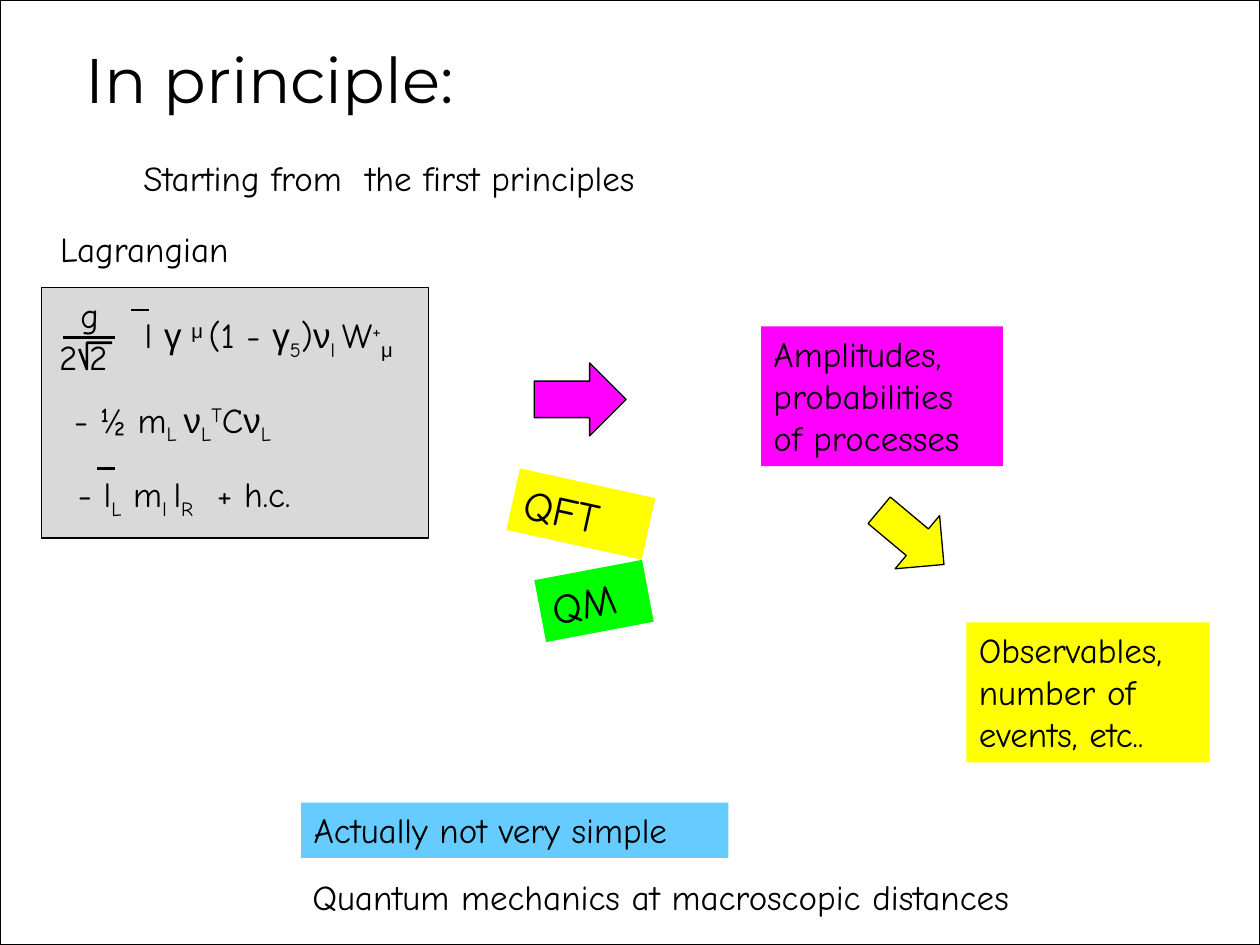
from dataclasses import dataclass

from lxml.etree import SubElement
from pptx import Presentation
from pptx.dml.color import RGBColor
from pptx.enum.shapes import MSO_CONNECTOR as Connector, MSO_SHAPE as Shape
from pptx.enum.text import MSO_ANCHOR as Anchor, PP_ALIGN as Align
from pptx.oxml.ns import qn
from pptx.util import Inches, Pt


@dataclass(frozen=True)
class Theme:
    ink: str = "000000"
    paper: str = "FFFFFF"
    panel: str = "D9D9D9"
    magenta: str = "FF00FF"
    yellow: str = "FFFF00"
    green: str = "00FF00"
    sky: str = "66CCFF"
    title_font: str = "Montserrat"
    body_font: str = "Comic Neue"
    greek_font: str = "Arial"
    title_size: int = 36
    label_size: int = 24
    body_size: int = 20
    outline: float = 0.75
    stroke: float = 1.5


@dataclass(frozen=True)
class Box:
    left: float
    top: float
    width: float
    height: float

    def inner(self, left, top, width, height):
        return Box(self.left + left, self.top + top, width, height)

    def lengths(self):
        return [Inches(value) for value in (self.left, self.top, self.width, self.height)]


THEME = Theme()
SUPER, SUB = 30, -25


def color(value):
    return RGBColor.from_string(value)


def style_run(run, size, font):
    run.font.size = Pt(size)
    run.font.name = font
    run.font.color.rgb = color(THEME.ink)


def add_block(slide, box, fill, kind=Shape.RECTANGLE, outlined=False, rotation=0):
    shape = slide.shapes.add_shape(kind, *box.lengths())
    shape.shadow.inherit = False
    shape.rotation = rotation
    shape.fill.solid()
    shape.fill.fore_color.rgb = color(fill)
    if outlined:
        shape.line.color.rgb = color(THEME.ink)
        shape.line.width = Pt(THEME.outline)
    else:
        shape.line.fill.background()
    return shape


def write_lines(shape, lines, size=THEME.body_size, wrap=True):
    frame = shape.text_frame
    frame.word_wrap = wrap
    frame.vertical_anchor = Anchor.TOP
    frame.text = "\n".join(lines)
    for paragraph in frame.paragraphs:
        paragraph.alignment = Align.LEFT
        for run in paragraph.runs:
            style_run(run, size, THEME.body_font)


def add_text(slide, box, lines, wrap=True):
    shape = slide.shapes.add_textbox(*box.lengths())
    write_lines(shape, lines, wrap=wrap)
    return shape


def add_card(slide, box, fill, lines, size=THEME.body_size, rotation=0):
    write_lines(add_block(slide, box, fill, rotation=rotation), lines, size)


def add_formula(slide, box, parts):
    frame = slide.shapes.add_textbox(*box.lengths()).text_frame
    frame.word_wrap = False
    for text, baseline in parts:
        run = frame.paragraphs[0].add_run()
        run.text = text
        style_run(run, THEME.body_size, THEME.greek_font if text[0] in "γμν" else THEME.body_font)
        if baseline:
            run.font._element.set("baseline", str(baseline * 1000))


def add_bar(slide, left, top, width):
    x, y, length = Inches(left), Inches(top), Inches(width)
    bar = slide.shapes.add_connector(Connector.STRAIGHT, x, y, x + length, y)
    bar.line.color.rgb = color(THEME.ink)
    bar.line.width = Pt(THEME.stroke)
    SubElement(bar._element.spPr, qn("a:effectLst"))


def add_coupling(slide, box):
    fraction = add_text(slide, box, ["g", "2 2"], wrap=False)
    numerator = fraction.text_frame.paragraphs[0]
    numerator._p.get_or_add_pPr().set("marL", str(Inches(0.17)))
    add_bar(slide, box.left + 0.13, box.top + 0.4, 0.41)

    points = [(0.26, 0.49), (0.32, 0.65), (0.32, 0.44), (0.52, 0.44)]
    corners = [(Inches(box.left + x), Inches(box.top + y)) for x, y in points]
    builder = slide.shapes.build_freeform(*corners[0])
    builder.add_line_segments(corners[1:], close=False)
    root = builder.convert_to_shape()
    root.shadow.inherit = False
    root.fill.background()
    root.line.color.rgb = color(THEME.ink)
    root.line.width = Pt(THEME.stroke)


def add_lagrangian(slide, box):
    add_block(slide, box, THEME.panel, outlined=True)
    add_text(slide, box.inner(0.05, -0.52, 1.67, 0.44), ["Lagrangian"])
    add_coupling(slide, box.inner(0.04, 0, 0.62, 0.77))
    add_formula(slide, box.inner(0.72, 0.16, 2.3, 0.44), [
        ("l ", 0), ("γ ", 0), ("μ ", SUPER), ("(1 - ", 0), ("γ", 0), ("5", SUB), (")", 0),
        ("ν", 0), ("l ", SUB), ("W", 0), ("+", SUPER), ("μ", SUB)])
    add_formula(slide, box.inner(0.16, 0.83, 2.6, 0.44), [
        ("- ½ m", 0), ("L ", SUB), ("ν", 0), ("L", SUB), ("T", SUPER),
        ("C", 0), ("ν", 0), ("L", SUB)])
    add_formula(slide, box.inner(0.19, 1.42, 2.16, 0.44), [
        ("- l", 0), ("L", SUB), (" m", 0), ("l ", SUB), ("l", 0), ("R", SUB), ("  + h.c.", 0)])
    for left, top in ((0.71, 0.18), (0.44, 1.44)):
        add_bar(slide, box.left + left, box.top + top, 0.14)


def add_theories(slide, box):
    add_block(slide, box.inner(0.18, 0, 0.73, 0.58), THEME.magenta, Shape.RIGHT_ARROW, True)
    add_card(slide, box.inner(0, 0.95, 1.1, 0.5), THEME.yellow, ["QFT"], THEME.label_size, 12.4)
    add_card(slide, box.inner(0.22, 1.64, 0.87, 0.5), THEME.green, ["QM"], THEME.label_size, 349.3)


def add_results(slide, box):
    add_card(slide, box.inner(0, 0, 1.92, 1.11), THEME.magenta,
             ["Amplitudes, probabilities", "of processes"])
    add_block(slide, box.inner(0.92, 1.34, 0.55, 0.67), THEME.yellow, Shape.DOWN_ARROW, True, 309.9)
    add_card(slide, box.inner(1.63, 2.35, 1.93, 1.11), THEME.yellow,
             ["Observables,", "number of events, etc.."])


def add_conclusion(slide, box):
    add_card(slide, box.inner(0.01, 0, 3.39, 0.44), THEME.sky, ["Actually not very simple"])
    add_card(slide, box.inner(0, 0.53, 6.31, 0.44), THEME.paper,
             ["Quantum mechanics at macroscopic distances"])


def place_title(slide, box, text):
    title = slide.shapes.title
    title.left, title.top, title.width, title.height = box.lengths()
    frame = title.text_frame
    frame.text = text
    frame.word_wrap = False
    frame.vertical_anchor = Anchor.MIDDLE
    paragraph = frame.paragraphs[0]
    paragraph.alignment = Align.CENTER
    style_run(paragraph.runs[0], THEME.title_size, THEME.title_font)
    slide.shapes._spTree.append(title._element)


def main():
    presentation = Presentation()
    presentation.slide_width, presentation.slide_height = Inches(10), Inches(7.5)
    slide = presentation.slides.add_slide(presentation.slide_layouts[5])
    add_block(slide, Box(0, 0, 10, 7.5), THEME.paper, outlined=True)
    add_text(slide, Box(1.04, 1.19, 5.43, 0.44), ["Starting from  the first principles"])
    add_lagrangian(slide, Box(0.33, 2.28, 3.07, 1.99))
    add_theories(slide, Box(4.06, 2.88, 1.1, 2.14))
    add_results(slide, Box(6.04, 2.59, 3.56, 3.46))
    add_conclusion(slide, Box(2.38, 6.37, 6.31, 0.97))
    place_title(slide, Box(0.41, 0.13, 3.46, 0.98), "In principle:")
    presentation.save("out.pptx")


if __name__ == "__main__":
    main()
